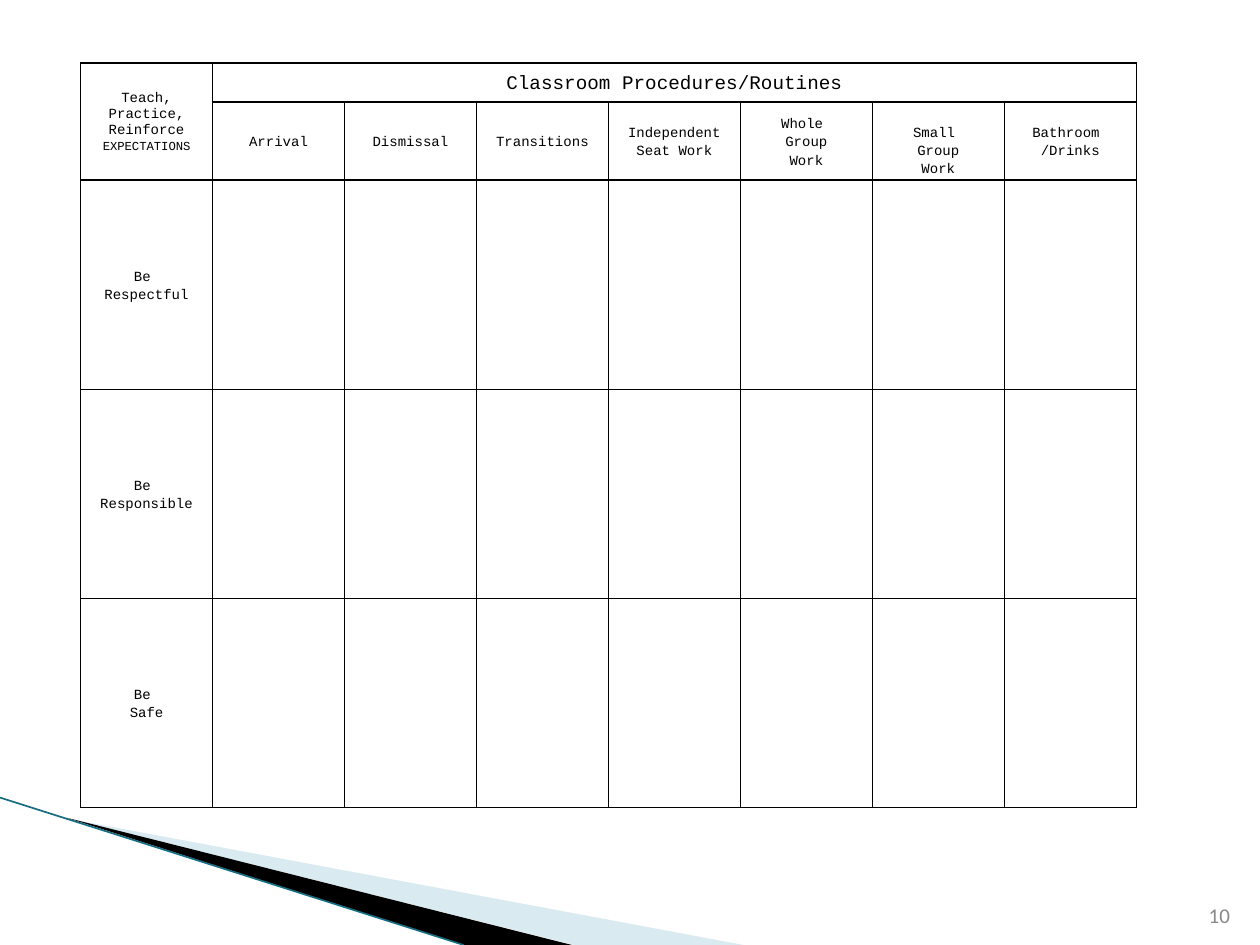
import pptx
import pptx.util
import pptx.dml.color
import pptx.enum.shapes
import pptx.enum.text
import pptx.oxml
import pptx.oxml.ns
from lxml import etree

Inches = pptx.util.Inches
Pt = pptx.util.Pt
RGBColor = pptx.dml.color.RGBColor
PP_ALIGN = pptx.enum.text.PP_ALIGN
MSO_ANCHOR = pptx.enum.text.MSO_ANCHOR
qn = pptx.oxml.ns.qn

BLACK = RGBColor(0x00, 0x00, 0x00)
WHITE = RGBColor(0xFF, 0xFF, 0xFF)
PALE_BLUE = RGBColor(0xA0, 0xCB, 0xDC)
TEAL = RGBColor(0x16, 0x6C, 0x80)
GREY = RGBColor(0x89, 0x89, 0x89)

ROUTINES = [
    ["Arrival"],
    ["Dismissal"],
    ["Transitions"],
    ["Independent", "Seat Work"],
    ["Whole ", "Group", "Work"],
    ["Small ", "Group", "Work"],
    ["Bathroom ", "/Drinks"],
]
EXPECTATIONS = ["Respectful", "Responsible", "Safe"]
ROW_HEIGHTS = [0.31, 0.62, 1.66, 1.66, 1.66]
TABLE_WIDTH = 8.38


def add_wedge(s, points, color, opacity=None):
    start, *rest = [(Inches(x), Inches(y)) for x, y in points]
    builder = s.shapes.build_freeform(*start)
    builder.add_line_segments(rest, close=True)
    sp = builder.convert_to_shape()
    sp.shadow.inherit = False
    sp.fill.solid()
    sp.fill.fore_color.rgb = color
    sp.line.fill.background()
    if opacity is not None:
        clr = sp.fill._xPr.find(".//" + qn("a:srgbClr"))
        etree.SubElement(clr, qn("a:alpha"), val=str(opacity * 1000))


def add_edge_line(s, start, end):
    line = s.shapes.add_connector(
        pptx.enum.shapes.MSO_CONNECTOR.STRAIGHT,
        *[Inches(v) for v in start + end])
    line.line.color.rgb = TEAL
    line.line.width = Pt(0.95)
    etree.SubElement(line._element.spPr, qn("a:effectLst"))


def style_cell(cell):
    tcPr = cell._tc.get_or_add_tcPr()
    for side in ("lnL", "lnR", "lnT", "lnB"):
        ln = etree.SubElement(tcPr, qn("a:" + side), w=str(Pt(1)))
        fill = etree.SubElement(ln, qn("a:solidFill"))
        etree.SubElement(fill, qn("a:srgbClr"), val=str(BLACK))
    cell.fill.solid()
    cell.fill.fore_color.rgb = WHITE
    cell.vertical_anchor = MSO_ANCHOR.MIDDLE
    cell.margin_left = cell.margin_right = cell.margin_top = Inches(0.01)
    cell.margin_bottom = 0


def format_paragraph(p, size, font, color, align):
    p.alignment = align
    for r in p.runs:
        r.font.size = Pt(size)
        r.font.name = font
        r.font.color.rgb = color


def write_cell(cell, lines, size=8):
    tf = cell.text_frame
    tf.text = "\n".join(lines)
    for p in tf.paragraphs:
        p.line_spacing = 1.15
        format_paragraph(p, size, "Courier New", BLACK, PP_ALIGN.CENTER)


def add_matrix(s):
    column_count = len(ROUTINES) + 1
    frame = s.shapes.add_table(
        len(ROW_HEIGHTS), column_count, Inches(0.64), Inches(0.5),
        Inches(TABLE_WIDTH), Inches(sum(ROW_HEIGHTS)))
    table = frame.table
    table.first_row = False
    table.horz_banding = False
    for column in table.columns:
        column.width = Inches(TABLE_WIDTH / column_count)
    for row, height in zip(table.rows, ROW_HEIGHTS):
        row.height = Inches(height)
    for cell in table.iter_cells():
        style_cell(cell)

    corner = table.cell(0, 0)
    corner.merge(table.cell(1, 0))
    write_cell(corner, ["Teach, Practice, Reinforce", "EXPECTATIONS"])
    first, last = corner.text_frame.paragraphs
    first.line_spacing = 1.0
    last.space_after = Pt(10)
    last.runs[0].font.size = Pt(7)

    heading = table.cell(0, 1)
    heading.merge(table.cell(0, column_count - 1))
    write_cell(heading, ["Classroom Procedures/Routines"], 11)

    for col, lines in enumerate(ROUTINES, 1):
        write_cell(table.cell(1, col), lines)
    table.cell(1, 6).margin_top = Inches(0.15)
    for row, expectation in enumerate(EXPECTATIONS, 2):
        write_cell(table.cell(row, 0), ["Be ", expectation])


def add_page_number(s, number):
    box = s.shapes.add_textbox(
        Inches(9.46), Inches(7.01), Inches(0.4), Inches(0.4))
    tf = box.text_frame
    tf.word_wrap = True
    tf.vertical_anchor = MSO_ANCHOR.BOTTOM
    tf.margin_left = tf.margin_right = Inches(0.1)
    tf.text = number
    format_paragraph(tf.paragraphs[0], 12, "Calibri", GREY, PP_ALIGN.RIGHT)


def main():
    prs = pptx.Presentation()
    prs.slide_width = Inches(10)
    prs.slide_height = Inches(7.5)
    s = prs.slides.add_slide(prs.slide_layouts[6])
    add_wedge(s, [(0.55, 6.5), (5.9, 7.5), (4.56, 7.5)], PALE_BLUE, 40)
    add_wedge(s, [(0.53, 6.49), (4.54, 7.5), (3.68, 7.5)], BLACK)
    add_edge_line(s, (0, 6.33), (3.68, 7.5))
    add_matrix(s)
    add_page_number(s, "10")
    prs.save("out.pptx")


if __name__ == "__main__":
    main()
